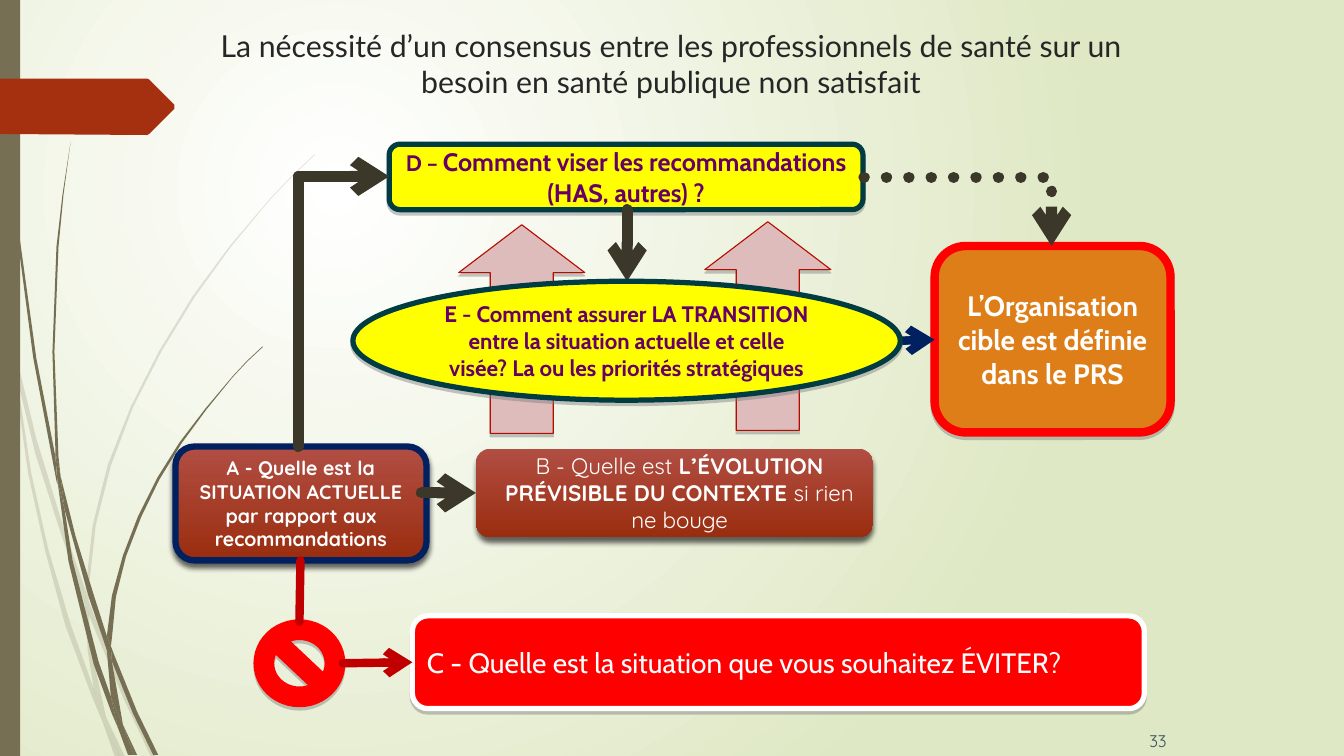
from dataclasses import dataclass
from typing import Optional

from lxml import etree
from pptx import Presentation
from pptx.dml.color import RGBColor
from pptx.enum.dml import MSO_LINE
from pptx.enum.shapes import MSO_CONNECTOR, MSO_SHAPE
from pptx.enum.text import MSO_ANCHOR, PP_ALIGN
from pptx.oxml.ns import qn
from pptx.util import Inches, Pt

ROUND, OVAL, UP = MSO_SHAPE.ROUNDED_RECTANGLE, MSO_SHAPE.OVAL, MSO_SHAPE.UP_ARROW
RECT, NO_SIGN = MSO_SHAPE.RECTANGLE, MSO_SHAPE.NO_SYMBOL
STRAIGHT, ELBOW = MSO_CONNECTOR.STRAIGHT, MSO_CONNECTOR.ELBOW
LEFT, CENTER, RIGHT = PP_ALIGN.LEFT, PP_ALIGN.CENTER, PP_ALIGN.RIGHT
TOP, MIDDLE, BOTTOM = MSO_ANCHOR.TOP, MSO_ANCHOR.MIDDLE, MSO_ANCHOR.BOTTOM
DOTTED = MSO_LINE.ROUND_DOT

WHITE = RGBColor(0xFF, 0xFF, 0xFF)
PALE_GREEN = RGBColor(0xDF, 0xE8, 0xC4)
OLIVE = RGBColor(0x76, 0x6F, 0x54)
RUST = RGBColor(0xA5, 0x30, 0x10)
PINK = RGBColor(0xDE, 0xBC, 0xBC)
CRIMSON = RGBColor(0xB5, 0x0C, 0x00)
RED = RGBColor(0xFF, 0x00, 0x00)
DARK_RED = RGBColor(0xC0, 0x00, 0x00)
BRICK_TOP = RGBColor(0xB1, 0x4E, 0x43)
BRICK_END = RGBColor(0x9A, 0x2D, 0x0F)
NAVY = RGBColor(0x00, 0x20, 0x60)
YELLOW = RGBColor(0xFF, 0xFF, 0x00)
TEAL = RGBColor(0x00, 0x3C, 0x42)
ORANGE = RGBColor(0xDE, 0x7E, 0x18)
PURPLE = RGBColor(0x66, 0x00, 0x66)
DARK = RGBColor(0x3B, 0x38, 0x2A)
INK = RGBColor(0x26, 0x26, 0x26)
SLATE = RGBColor(0x35, 0x51, 0x61)
GREY = RGBColor(0x80, 0x80, 0x80)
BLACK = RGBColor(0x00, 0x00, 0x00)
BRICK = (BRICK_TOP, BRICK_END)


@dataclass
class Text:
    runs: tuple
    font: str
    color: RGBColor
    align: PP_ALIGN = CENTER
    anchor: MSO_ANCHOR = MIDDLE
    indent: float = 0
    after: float = 0


@dataclass
class Box:
    kind: MSO_SHAPE
    at: tuple
    fill: object
    line: Optional[RGBColor] = None
    width: float = 0
    text: Optional[Text] = None
    adj: tuple = ()
    shadow: tuple = (GREY, 45, 0, 2.4)


@dataclass
class Link:
    start: tuple
    end: tuple
    color: RGBColor
    width: float
    head: bool = True
    bent: bool = False
    rotation: int = 0
    dotted: bool = False


PALE_WISPS = (
    ((.11, 3.5), (.09, 3.22), (0, 2.82), (0, 2.99), (.1, 3.44)),
    ((.58, 5.22), (.84, 5.99), (.85, 5.86), (.62, 5.2), (.36, 4.35), (.14, 3.45), (.17, 3.76), (.35, 4.5)),
    ((.92, 6.07), (.88, 5.96), (.88, 6.1), (1.23, 6.94), (1.5, 7.51), (1.55, 7.51), (1.27, 6.92)),
    ((1.19, 7.51), (1.24, 7.51), (1.05, 7.11)),
    ((.93, 6.83), (.7, 6.19), (.48, 5.45), (.31, 4.69), (.17, 3.76), (.11, 3.5), (.28, 4.7), (.45, 5.47),
     (.65, 6.21), (.92, 6.93), (1.01, 7.14), (.99, 7.07)),
    ((.84, 5.99), (.87, 6.46), (.93, 6.83), (.96, 6.92), (1.05, 7.11), (.91, 6.46), (.88, 6.08)),
    ((.88, 5.84), (.95, 5.21), (1.1, 4.62), (1.32, 4.04), (1.6, 3.49), (1.93, 2.95), (2.29, 2.45), (2.68, 1.98),
     (2.9, 1.75), (3.12, 1.54), (3.12, 1.53), (2.89, 1.75), (2.68, 1.97), (2.28, 2.44), (1.91, 2.94),
     (1.58, 3.48), (1.3, 4.03), (1.07, 4.61), (.92, 5.21), (.85, 5.84), (.88, 5.96)),
    ((1.01, 7.14), (1.14, 7.51), (1.19, 7.51)),
    ((.88, 6.08), (.88, 5.96), (.85, 5.86), (.84, 5.99)),
    ((.96, 6.92), (.93, 6.83), (.99, 7.07), (1.01, 7.14), (1.19, 7.51), (1.05, 7.11)),
)
DARK_WISPS = (
    ((.07, 1.1), (.17, 2.33), (.33, 3.55), (.56, 4.77), (.57, 4.81), (.55, 4.53), (.36, 3.55), (.19, 2.32),
     (.08, 1.09), (.05, .48), (.04, 0), (.03, 0), (.04, .48)),
    ((.88, 5.92), (1.06, 6.45), (1.06, 6.31), (.93, 5.9), (.75, 5.32), (.6, 4.72), (.64, 5.05)),
    ((1.13, 6.49), (1.1, 6.41), (1.11, 6.56), (1.32, 7.08), (1.52, 7.49), (1.57, 7.49), (1.36, 7.06)),
    ((1.1, 6.91), (.98, 6.57), (.72, 5.56), (.64, 5.05), (.57, 4.77), (.68, 5.57), (.93, 6.59), (1.11, 7.08),
     (1.17, 7.22), (1.16, 7.17)),
    ((.6, 4.72), (.58, 4.53), (.54, 3.49), (.58, 2.45), (.63, 1.93), (.7, 1.41), (.62, 1.93), (.56, 2.45),
     (.52, 3.49), (.55, 4.49)),
    ((1.33, 7.49), (1.36, 7.49), (1.22, 7.19)),
    ((.57, 4.77), (.64, 5.05), (.6, 4.72), (.55, 4.49), (.55, 4.53)),
    ((1.11, 6.33), (1.15, 5.92), (1.25, 5.52), (1.4, 5.13), (1.58, 4.76), (1.8, 4.4), (2.05, 4.06), (2.31, 3.74),
     (2.45, 3.59), (2.61, 3.44), (2.6, 3.44), (2.45, 3.58), (2.31, 3.73), (2.04, 4.05), (1.78, 4.39),
     (1.56, 4.74), (1.37, 5.12), (1.22, 5.51), (1.11, 5.91), (1.06, 6.31), (1.1, 6.41)),
    ((1.17, 7.22), (1.27, 7.49), (1.31, 7.49)),
    ((1.06, 6.45), (1.1, 6.91), (1.16, 7.06), (1.22, 7.19), (1.11, 6.56)),
    ((1.06, 6.45), (1.11, 6.56), (1.1, 6.41), (1.06, 6.31)),
    ((1.16, 7.06), (1.1, 6.91), (1.17, 7.22), (1.3, 7.49), (1.33, 7.49), (1.22, 7.19)),
)
RIBBON = ((0, .78), (1.46, .78), (1.48, .79), (1.73, 1.04), (1.73, 1.08), (1.48, 1.33), (1.46, 1.34), (0, 1.33))

TITLE = Text((("La nécessité d’un consensus entre les professionnels de santé sur un besoin en santé publique "
               "non satisfait", 21.6, False),), "Lato", INK, anchor=TOP)
NUMBER = Text((("33", 12, False),), "Quicksand", SLATE, RIGHT, BOTTOM)
AVOID = Text((("C - Quelle est la situation que vous souhaitez ÉVITER?", 20, False),), "Cabin", WHITE, LEFT)
CURRENT = Text((("A - Quelle est la SITUATION ACTUELLE par rapport aux recommandations", 14, True),),
               "Quicksand", WHITE)
TARGET = Text((("D – ", 16, True), ("Comment viser les recommandations (HAS, autres) ?", 18, True)),
              "Cabin", PURPLE)
ORGANISATION = Text((("L’Organisation cible est définie dans le PRS", 20, True),), "Cabin", WHITE)
CONTEXT = Text((("B - Quelle est ", 16, False), ("L’ÉVOLUTION PRÉVISIBLE DU CONTEXTE ", 16, True),
                ("si rien ne bouge", 16, False)), "Quicksand", WHITE, indent=.1, after=12)
TRANSITION = Text((("E - Comment assurer LA TRANSITION entre la situation actuelle et celle visée? "
                    "La ou les priorités stratégiques", 16, True),), "Cabin", PURPLE)
SOFT = (BLACK, 60, 4, 3)

DIAGRAM = (
    Box(UP, (4.55, 2.23, 1.25, 2.07), PINK, CRIMSON, .79, adj=(.5, .38)),
    Box(UP, (6.99, 2.2, 1.25, 2.07), PINK, CRIMSON, .79, adj=(.5, .38)),
    Box(ROUND, (4.09, 6.11, 7.26, .92), RED, WHITE, 3.75, AVOID),
    Box(ROUND, (1.74, 4.43, 2.49, 1.13), BRICK, NAVY, 4.5, CURRENT, shadow=SOFT),
    Box(ROUND, (3.86, 1.43, 4.7, .65), YELLOW, TEAL, 3.75, TARGET),
    Box(NO_SIGN, (2.54, 6.17, .86, .82), RED, RED, 3.75),
    Box(ROUND, (9.27, 2.44, 2.34, 1.85), ORANGE, RED, 6, ORGANISATION),
    Link((8.93, 3.38), (9.27, 3.37), NAVY, 6),
    Link((4.75, 3.54), (2.07, 2.64), DARK, 8, bent=True, rotation=90),
    Box(ROUND, (4.72, 4.45, 3.94, .88), BRICK, text=CONTEXT, shadow=SOFT),
    Link((6.22, 2.08), (6.22, 2.79), DARK, 8),
    Box(OVAL, (3.5, 2.79, 5.43, 1.18), YELLOW, TEAL, 3.75, TRANSITION),
    Link((8.57, 1.76), (10.43, 2.44), DARK, 8, bent=True, dotted=True),
    Link((4.18, 4.89), (4.72, 4.89), DARK, 8),
    Link((2.98, 5.56), (2.97, 6.17), DARK_RED, 6, head=False),
    Link((3.4, 6.58), (4.09, 6.57), DARK_RED, 6),
)


def write(tf, text: Text) -> None:
    tf.word_wrap = True
    tf.vertical_anchor = text.anchor
    p = tf.paragraphs[0]
    p.alignment = text.align
    p.space_after = Pt(text.after)
    if text.indent:
        p._p.get_or_add_pPr().set("marL", str(Inches(text.indent)))
    for words, size, bold in text.runs:
        r = p.add_run()
        r.text = words
        r.font.name, r.font.size, r.font.bold = text.font, Pt(size), bold
        r.font.color.rgb = text.color


def add_label(s, at: tuple, text: Text) -> None:
    write(s.shapes.add_textbox(*map(Inches, at)).text_frame, text)


def add_outline(s, points: tuple, color: RGBColor, alpha: int = 100) -> None:
    start, *rest = [(Inches(x), Inches(y)) for x, y in points]
    fb = s.shapes.build_freeform(*start)
    fb.add_line_segments(rest, close=True)
    sp = fb.convert_to_shape()
    sp.shadow.inherit = False
    sp.fill.solid()
    sp.fill.fore_color.rgb = color
    sp.line.fill.background()
    if alpha < 100:
        clr = sp._element.spPr.find(qn("a:solidFill")).find(qn("a:srgbClr"))
        etree.SubElement(clr, qn("a:alpha"), val=str(alpha * 1000))


def set_gradient(fill, colors: tuple) -> None:
    fill.gradient()
    for stop, color in zip(fill.gradient_stops, colors):
        stop.color.rgb = color


def add_shadow(sp, color: RGBColor, alpha: int, blur: float, dist: float) -> None:
    shadow = etree.SubElement(sp._element.spPr.find(qn("a:effectLst")), qn("a:outerShdw"), blurRad=str(Pt(blur)),
                              dist=str(Pt(dist)), dir="5400000", algn="ctr", rotWithShape="0")
    clr = etree.SubElement(shadow, qn("a:srgbClr"), val=str(color))
    etree.SubElement(clr, qn("a:alpha"), val=str(alpha * 1000))


def add_box(s, box: Box) -> None:
    sp = s.shapes.add_shape(box.kind, *map(Inches, box.at))
    for i, value in enumerate(box.adj):
        sp.adjustments[i] = value
    if isinstance(box.fill, RGBColor):
        sp.fill.solid()
        sp.fill.fore_color.rgb = box.fill
    else:
        set_gradient(sp.fill, box.fill)
        sp.fill.gradient_angle = 270
    if box.line is None:
        sp.line.fill.background()
    else:
        sp.line.color.rgb, sp.line.width = box.line, Pt(box.width)
    sp.shadow.inherit = False
    if box.shadow:
        add_shadow(sp, *box.shadow)
    if box.text:
        write(sp.text_frame, box.text)


def add_link(s, link: Link) -> None:
    c = s.shapes.add_connector(ELBOW if link.bent else STRAIGHT, *map(Inches, link.start + link.end))
    c.line.color.rgb, c.line.width = link.color, Pt(link.width)
    if link.dotted:
        c.line.dash_style = DOTTED
    spPr = c._element.spPr
    if link.bent:
        spPr.find(qn("a:prstGeom")).set("prst", "bentConnector2")
        spPr.find(qn("a:xfrm")).set("rot", str(link.rotation * 60000))
    ln = c.line._get_or_add_ln()
    ln.set("cap", "rnd")
    etree.SubElement(ln, qn("a:round"))
    if link.head:
        etree.SubElement(ln, qn("a:tailEnd"), type="arrow")
    etree.SubElement(spPr, qn("a:effectLst"))


def set_background(s) -> None:
    set_gradient(s.background.fill, (WHITE, PALE_GREEN))
    grad = next(s._element.iter(qn("a:gradFill")))
    grad.remove(grad.find(qn("a:lin")))
    circle = etree.SubElement(grad, qn("a:path"), path="circle")
    etree.SubElement(circle, qn("a:fillToRect"), l="50000", t="50000", r="100000", b="100000")


def main() -> None:
    prs = Presentation()
    prs.slide_width, prs.slide_height = Inches(13.33), Inches(7.5)
    s = prs.slides.add_slide(prs.slide_layouts[6])
    set_background(s)
    for wisp in PALE_WISPS:
        add_outline(s, wisp, OLIVE, 20)
    for wisp in DARK_WISPS:
        add_outline(s, wisp, OLIVE)
    add_box(s, Box(RECT, (0, 0, .2, 7.5), OLIVE, shadow=()))
    add_outline(s, RIBBON, RUST)
    add_label(s, (1.91, .22, 9.49, .89), TITLE)
    for item in DIAGRAM:
        add_box(s, item) if isinstance(item, Box) else add_link(s, item)
    add_label(s, (10.5, 7.17, 1.17, .33), NUMBER)
    prs.save("out.pptx")


if __name__ == "__main__":
    main()
